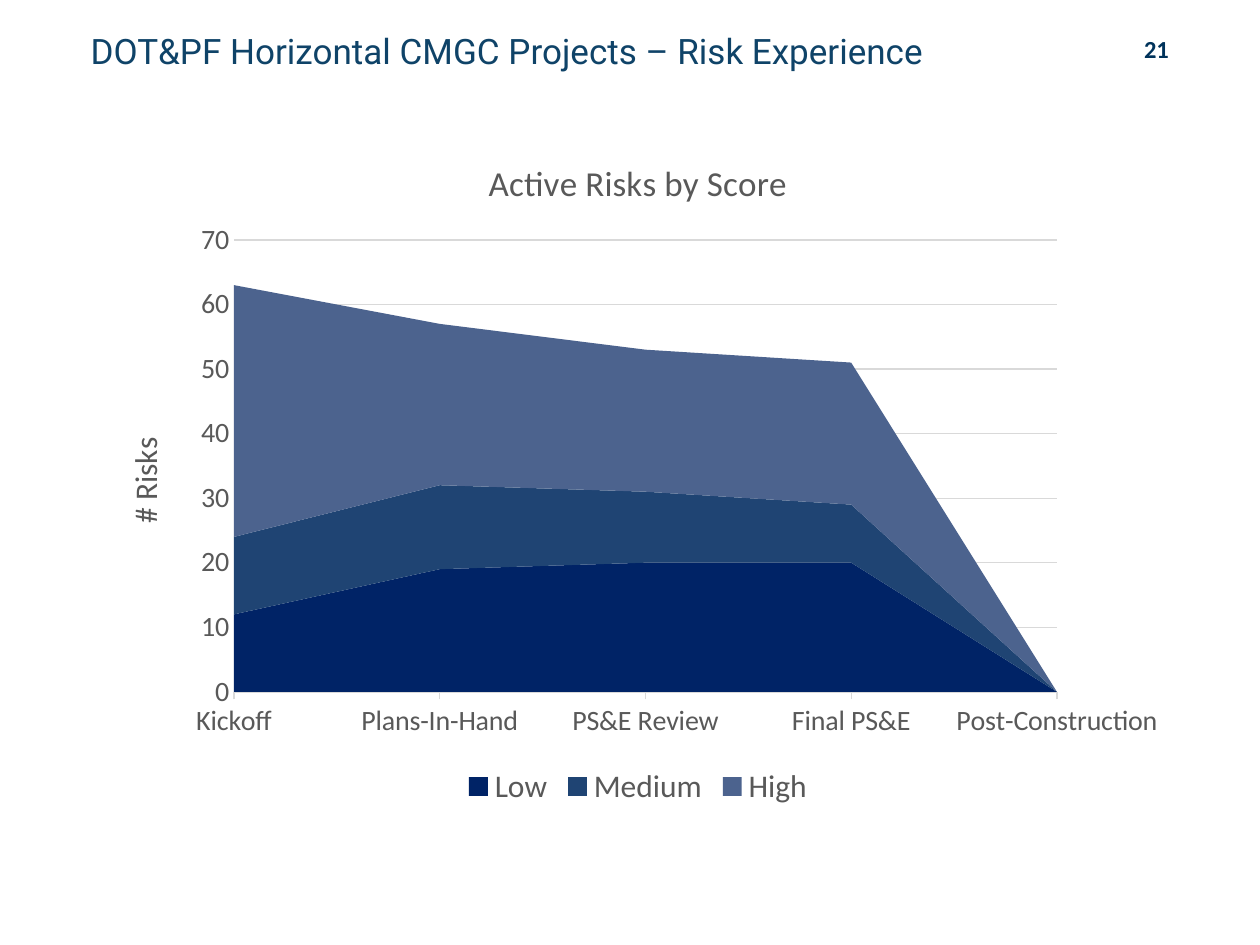
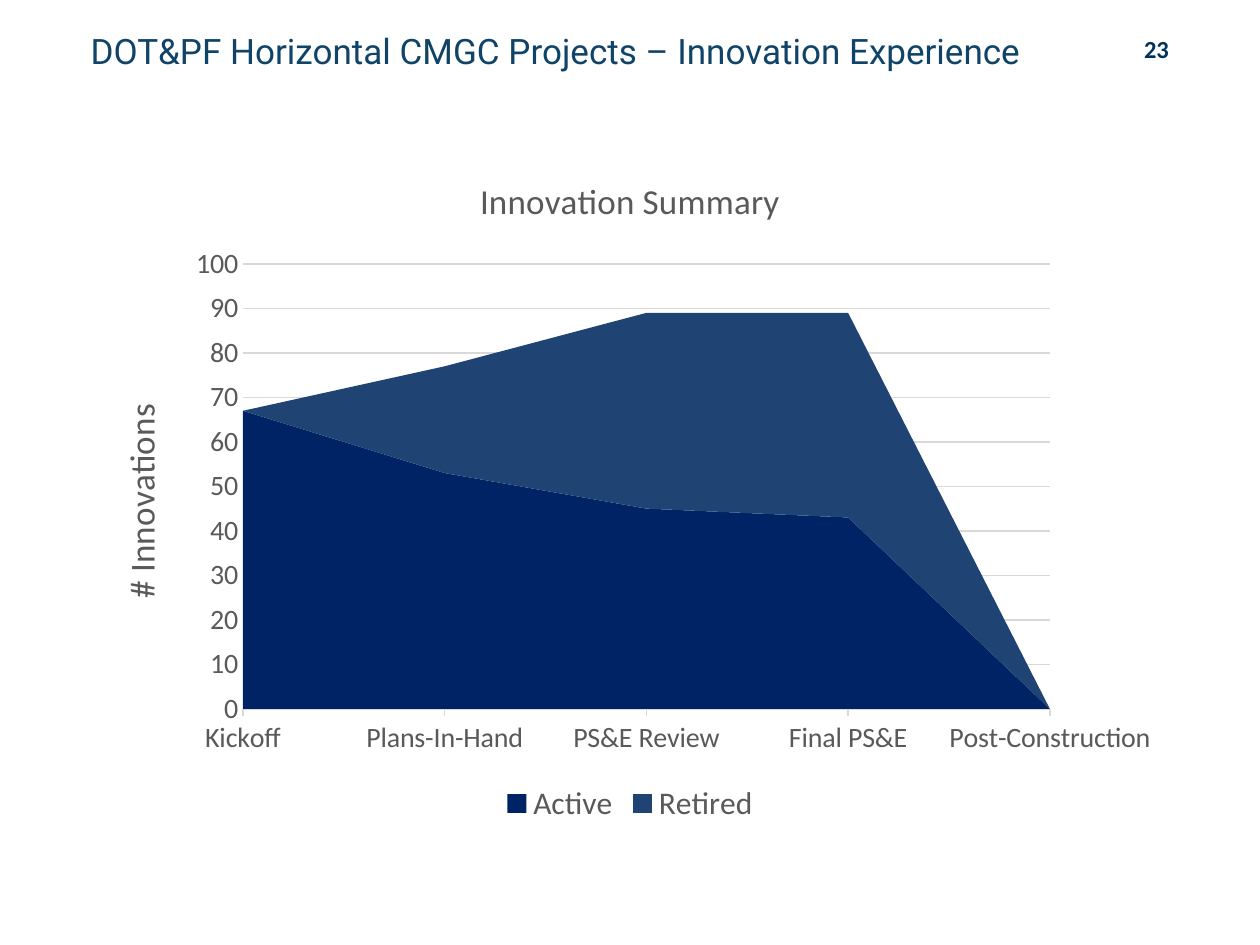
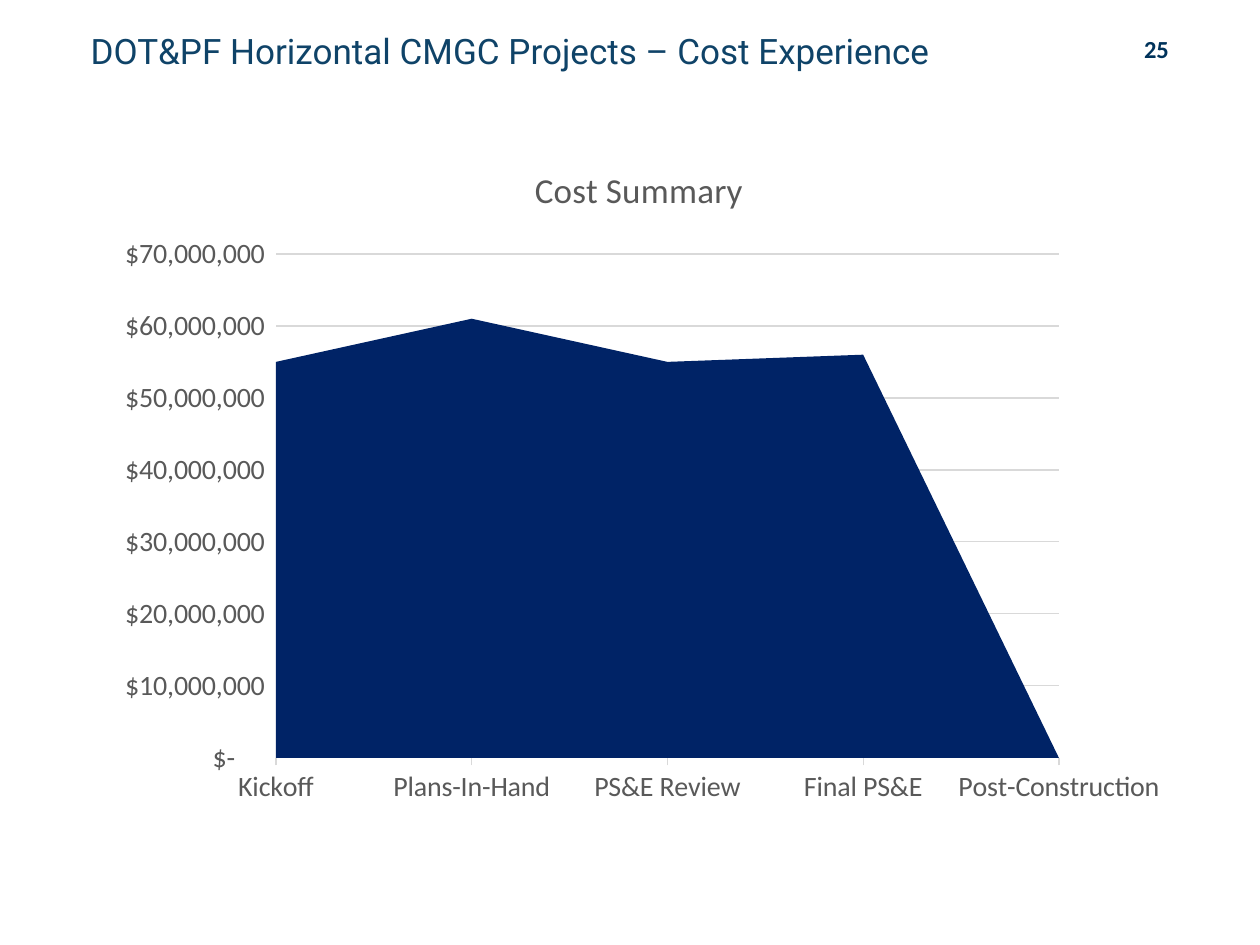
from lxml import etree
from pptx import Presentation
from pptx.chart.data import CategoryChartData
from pptx.dml.color import RGBColor
from pptx.enum.chart import XL_CHART_TYPE, XL_LEGEND_POSITION, XL_TICK_MARK
from pptx.enum.text import MSO_ANCHOR, PP_ALIGN
from pptx.oxml.ns import qn
from pptx.util import Pt

AREA = XL_CHART_TYPE.AREA_STACKED
BOTTOM = XL_LEGEND_POSITION.BOTTOM
OUTSIDE, NO_TICK = XL_TICK_MARK.OUTSIDE, XL_TICK_MARK.NONE
MIDDLE, TOP = MSO_ANCHOR.MIDDLE, MSO_ANCHOR.TOP
LEFT, CENTER = PP_ALIGN.LEFT, PP_ALIGN.CENTER

PX = 914400 / 126
NAVY, GREY, RULE = "0F4368", "595959", "D9D9D9"
FILLS = ["002366", "1F4473", "4C638E"]
CHART_W, CHART_H = 1084, 680
STAGES = ["Kickoff", "Plans-In-Hand", "PS&E Review", "Final PS&E", "Post-Construction"]
DOLLARS = r'_("$"* #,##0_);_("$"* \(#,##0\);_("$"* "-"??_);_(@_)'

SLIDES = [
    dict(number="21", topic="Risk", title="Active Risks by Score", at=(96, 132),
         plot=(234, 240, 823, 452), axis="# Risks", axis_size=18, top=70, step=10, fmt="General",
         series={"Low": [12, 19, 20, 20, None], "Medium": [12, 13, 11, 9, None],
                 "High": [39, 25, 22, 22, None]}),
    dict(number="23", topic="Innovation", title="Innovation Summary", at=(88, 149),
         plot=(243, 264, 807, 445), axis="# Innovations", axis_size=20, top=100, step=10, fmt="General",
         series={"Active": [67, 53, 45, 43, None], "Retired": [0, 24, 44, 46, None]}),
    dict(number="25", topic="Cost", title="Cost Summary", at=(97, 139),
         plot=(276, 254, 783, 504), axis=None, top=70000000, step=10000000, fmt=DOLLARS,
         series={"Series 1": [55000000, 61000000, 55000000, 56000000, None]}),
]


def px(*lengths):
    return [round(v * PX) for v in lengths]


def write(tf, text, size, color=GREY, font="Calibri", bold=False, align=CENTER, spacing=None):
    p = tf.paragraphs[0]
    p.alignment = align
    p.line_spacing = spacing
    r = p.add_run()
    r.text = text
    r.font.size, r.font.name, r.font.bold = Pt(size), font, bold
    r.font.color.rgb = RGBColor.from_string(color)


prs = Presentation()
prs.slide_width, prs.slide_height = px(1260, 945)

for d in SLIDES:
    s = prs.slides.add_slide(prs.slide_layouts[5])

    sp = s.shapes.title
    sp.left, sp.top, sp.width, sp.height = px(78, 29, 1041, 49)
    tf = sp.text_frame
    tf.word_wrap, tf.vertical_anchor = True, MIDDLE
    write(tf, f"DOT&PF Horizontal CMGC Projects – {d['topic']} Experience", 20,
          color=NAVY, font="Roboto", align=LEFT, spacing=0.9)

    tf = s.shapes.add_textbox(*px(1129, 28, 55, 43)).text_frame
    tf.word_wrap, tf.vertical_anchor = True, TOP
    write(tf, d["number"], 14, color="00335B", bold=True)

    data = CategoryChartData(number_format=d["fmt"])
    data.categories = STAGES
    for name, values in d["series"].items():
        data.add_series(name, values)
    x, y = d["at"]
    chart = s.shapes.add_chart(AREA, *px(x, y, CHART_W, CHART_H), data).chart
    chart.font.size, chart.font.name = Pt(10), "Calibri"
    chart.has_title = True
    write(chart.chart_title.text_frame, d["title"], 20)
    chart.chart_title.include_in_layout = False

    plot = chart.plots[0]
    plot.vary_by_categories = False
    for series, color in zip(plot.series, FILLS):
        series.format.fill.solid()
        series.format.fill.fore_color.rgb = RGBColor.from_string(color)

    cat, val = chart.category_axis, chart.value_axis
    cat.major_tick_mark, val.major_tick_mark = OUTSIDE, NO_TICK
    cat.has_major_gridlines, val.has_major_gridlines = False, True
    for line in (cat.format.line, val.major_gridlines.format.line):
        line.color.rgb = RGBColor.from_string(RULE)
        line.width = Pt(0.75)
    val.format.line.fill.background()
    val.minimum_scale, val.maximum_scale, val.major_unit = 0, d["top"], d["step"]
    val.tick_labels.number_format = d["fmt"]
    val.tick_labels.number_format_is_linked = False
    fonts = [cat.tick_labels.font, val.tick_labels.font]
    sizes = [16, 16]

    chart.has_legend = len(d["series"]) > 1
    if chart.has_legend:
        chart.legend.position = BOTTOM
        chart.legend.include_in_layout = False
        fonts.append(chart.legend.font)
        sizes.append(18)
    for font, size in zip(fonts, sizes):
        font.size, font.name = Pt(size), "Calibri"
        font.color.rgb = RGBColor.from_string(GREY)

    if d["axis"]:
        write(val.axis_title.text_frame, d["axis"], d["axis_size"])
        val.axis_title._element.xpath(".//a:bodyPr")[0].set("rot", "-5400000")

    root = chart._chartSpace
    for el in root.xpath(".//c:crossBetween"):
        el.set("val", "midCat")
    for el in root.xpath(".//c:dispBlanksAs"):
        el.set("val", "zero")
    area = root.xpath(".//c:plotArea")[0]
    for el in area.findall(qn("c:layout")):
        area.remove(el)
    layout = etree.Element(qn("c:layout"))
    area.insert(0, layout)
    manual = etree.SubElement(layout, qn("c:manualLayout"))
    left, top, width, height = d["plot"]
    for tag, value in [("layoutTarget", "inner"), ("xMode", "edge"), ("yMode", "edge"),
                       ("x", (left - x) / CHART_W), ("y", (top - y) / CHART_H),
                       ("w", width / CHART_W), ("h", height / CHART_H)]:
        etree.SubElement(manual, qn(f"c:{tag}")).set("val", str(value))

prs.save("out.pptx")
